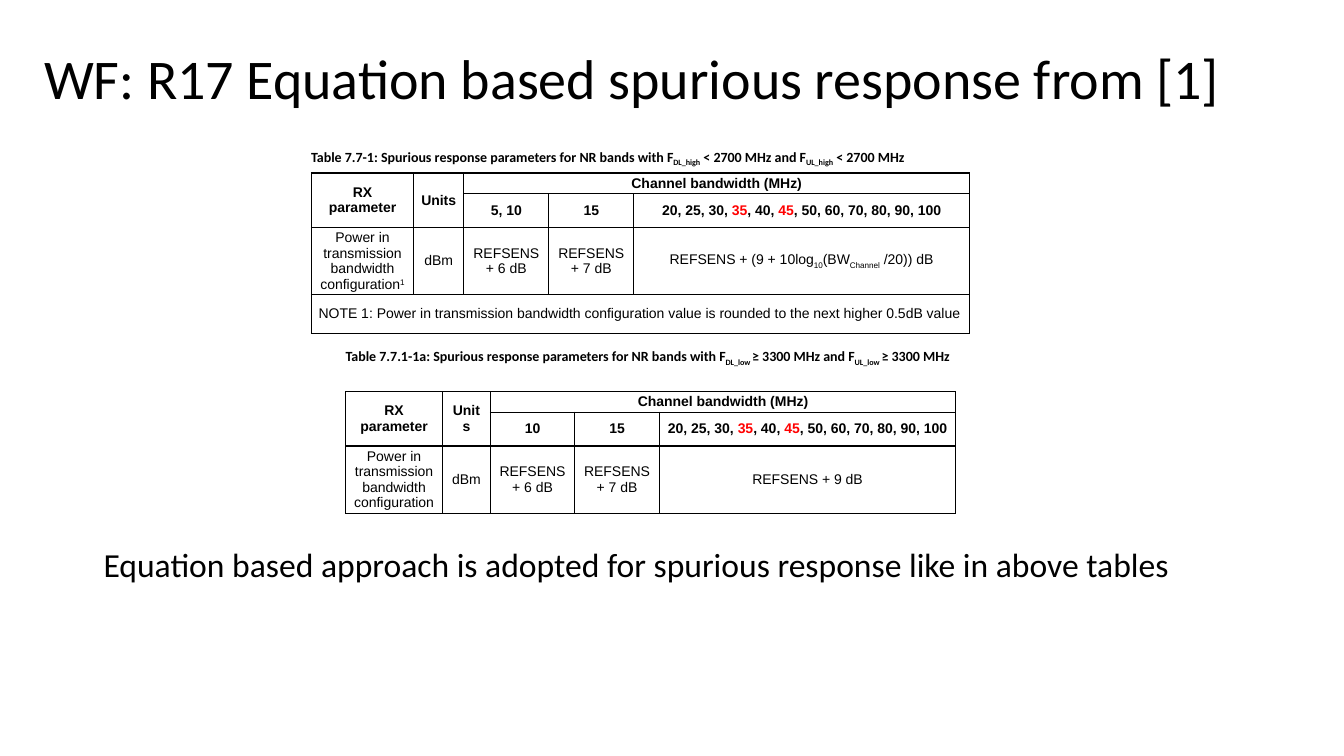
from lxml import etree
from pptx import Presentation
from pptx import util as u
from pptx.dml.color import RGBColor
from pptx.enum import text
from pptx.oxml import ns

BLACK = RGBColor(0, 0, 0)
RED = RGBColor(0xFF, 0, 0)
SUB, SUPER = -25000, 30000  # baseline shifts in thousandths of a percent

# A cell is a list of paragraphs; a paragraph is a list of plain strings
# or (string, colour or baseline shift) pairs.
TITLE = ["WF: R17 Equation based spurious response from [1]"]
CONCLUSION = ["Equation based approach is adopted for spurious response like in above tables"]
WIDE_BANDS = ["20, 25, 30, ", ("35", RED), ", 40, ", ("45", RED), ", 50, 60, 70, 80, 90, 100"]
POWER = "Power in transmission bandwidth configuration"
NOTE = ("NOTE\u00a01: Power in transmission bandwidth configuration value "
        "is rounded to the next higher 0.5dB value")

TABLES = [
    {
        "caption": ["Table 7.7-1: Spurious response parameters for NR bands with F", ("DL_high", SUB),
                    " < 2700 MHz and F", ("UL_high", SUB), " < 2700 MHz"],
        "caption_at": (7.59, 3.61),
        "at": (7.85, 4.36),
        "columns": (2.57, 1.27, 2.14, 2.14, 8.46),
        "rows": (0.52, 0.52, 1.65, 0.97),
        "narrow_band": "5, 10",
        "power": [POWER, ("1", SUPER)],
        "wide_level": ["REFSENS + (9 + 10log", ("10", SUB), "(BW", ("Channel", SUB), " /20)) dB"],
        "note": NOTE,
    },
    {
        "caption": ["Table 7.7.1-1a: Spurious response parameters for NR bands with F", ("DL_low ", SUB),
                    "≥ 3300 MHz and F", ("UL_low ", SUB), "≥ 3300 MHz"],
        "caption_at": (8.46, 8.64),
        "at": (8.71, 9.87),
        "columns": (2.44, 1.21, 2.12, 2.14, 7.46),
        "rows": (0.52, 0.52, 1.65),
        "narrow_band": "10",
        "power": [POWER],
        "wide_level": ["REFSENS + 9 dB"],
        "note": None,
    },
]


def write(frame, paragraphs, font_name, size, bold=False, align=text.PP_ALIGN.LEFT):
    for index, runs in enumerate(paragraphs):
        paragraph = frame.add_paragraph() if index else frame.paragraphs[0]
        paragraph.alignment = align
        paragraph.font.name = font_name
        paragraph.font.size = u.Pt(size)
        paragraph.font.bold = bold
        paragraph.font.color.rgb = BLACK
        for item in runs:
            words, mark = (item, None) if isinstance(item, str) else item
            run = paragraph.add_run()
            run.text = words
            if isinstance(mark, RGBColor):
                run.font.color.rgb = mark
            elif mark:
                run.font._element.set("baseline", str(mark))


def add_text(slide, at, size, runs, font_size, bold=False, anchor=text.MSO_ANCHOR.TOP):
    box = slide.shapes.add_textbox(*map(u.Cm, at + size))
    box.text_frame.word_wrap = True
    box.text_frame.vertical_anchor = anchor
    write(box.text_frame, [runs], "Calibri", font_size, bold)
    return box


def add_borders(cell):
    properties = cell._tc.get_or_add_tcPr()
    for index, side in enumerate(("lnL", "lnR", "lnT", "lnB")):
        line = etree.Element(ns.qn("a:" + side), w=str(u.Pt(1)))
        fill = etree.SubElement(line, ns.qn("a:solidFill"))
        etree.SubElement(fill, ns.qn("a:srgbClr"), val=str(BLACK))
        properties.insert(index, line)


def add_parameter_table(slide, data):
    grid = [
        [[["RX parameter"]], [["Units"]], [["Channel bandwidth (MHz)"]], [], []],
        [[], [], [[data["narrow_band"]]], [["15"]], [WIDE_BANDS]],
        [[data["power"]], [["dBm"]], [["REFSENS"], ["+ 6 dB"]], [["REFSENS"], ["+ 7 dB"]],
         [data["wide_level"]]],
    ]
    merges = [((0, 0), (1, 0)), ((0, 1), (1, 1)), ((0, 2), (0, 4))]
    if data["note"]:
        grid.append([[[data["note"]]], [], [], [], []])
        merges.append(((3, 0), (3, 4)))

    widths, heights = data["columns"], data["rows"]
    size = (sum(widths), sum(heights))
    table = slide.shapes.add_table(len(heights), len(widths), *map(u.Cm, data["at"] + size)).table
    table.first_row = table.horz_banding = False
    for column, width in zip(table.columns, widths):
        column.width = u.Cm(width)
    for row, height in zip(table.rows, heights):
        row.height = u.Cm(height)

    for row_index, row in enumerate(grid):
        for column_index, paragraphs in enumerate(row):
            cell = table.cell(row_index, column_index)
            cell.margin_left = cell.margin_right = u.Cm(0.18)
            cell.margin_top = cell.margin_bottom = 0
            cell.vertical_anchor = text.MSO_ANCHOR.MIDDLE
            cell.fill.background()
            add_borders(cell)
            align = text.PP_ALIGN.LEFT if row_index == 3 else text.PP_ALIGN.CENTER
            write(cell.text_frame, paragraphs, "Arial", 10, row_index < 2, align)
    for first, last in merges:
        table.cell(*first).merge(table.cell(*last))


def main():
    presentation = Presentation()
    presentation.slide_width, presentation.slide_height = u.Cm(33.87), u.Cm(19.05)
    slide = presentation.slides.add_slide(presentation.slide_layouts[6])

    title = add_text(slide, (0.86, 1.02), (32.49, 2.06), TITLE, 40, anchor=text.MSO_ANCHOR.MIDDLE)
    title.text_frame.paragraphs[0].line_spacing = 0.9
    add_text(slide, (2.36, 13.59), (29.16, 1.27), CONCLUSION, 24)
    for data in TABLES:
        add_text(slide, data["caption_at"], (16.94, 0.69), data["caption"], 10, bold=True)
        add_parameter_table(slide, data)
    presentation.save("out.pptx")


if __name__ == "__main__":
    main()
